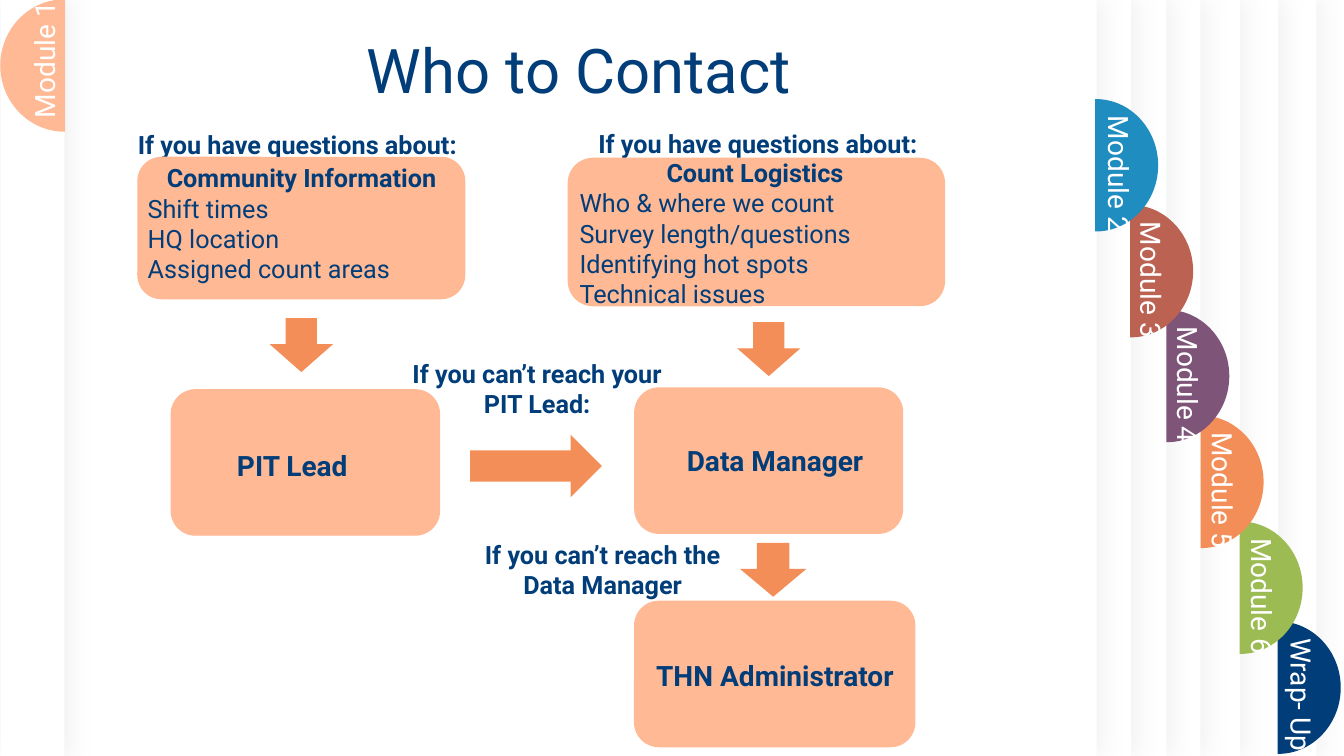
from lxml import etree
from pptx import Presentation
from pptx.dml.color import RGBColor
from pptx.enum.shapes import MSO_SHAPE
from pptx.enum.text import MSO_ANCHOR, MSO_AUTO_SIZE, PP_ALIGN
from pptx.oxml.ns import qn
from pptx.util import Pt

CENTER, LEFT = PP_ALIGN.CENTER, PP_ALIGN.LEFT
RECTANGLE, ROUNDED = MSO_SHAPE.RECTANGLE, MSO_SHAPE.ROUNDED_RECTANGLE
DOWN, RIGHT = MSO_SHAPE.DOWN_ARROW, MSO_SHAPE.RIGHT_ARROW
MIDDLE = MSO_ANCHOR.MIDDLE
GROW = MSO_AUTO_SIZE.SHAPE_TO_FIT_TEXT

COLORS = {
    "white": "FFFFFF", "navy": "003D79", "green": "9DBB53", "orange": "F48E58",
    "purple": "7E5479", "brick": "BB6253", "blue": "1F8DBF", "peach": "FFB994",
    "shadow": "D3D5D6",
}
FONT = "Roboto"
SLIDE_WIDTH, SLIDE_HEIGHT = 960, 540
PAGE_WIDTH = 755.3
PAGE_LEFTS = [185, 157.7, 130.3, 102.2, 77.8, 52.6, 28.1]
TAB_HEIGHT = 93.6
TAB_WIDTH = 44
CURVE = 0.55  # control point distance for a quarter ellipse
LABEL_SIZE = (38.9, 115.2)

TITLE = "Who to Contact"
# label, colour, left, top, label left
TABS = [
    ("Module 2", "blue", 782.8, 71.3, 776.2),
    ("Module 3", "brick", 807.8, 146.9, 799.2),
    ("Module 4", "purple", 833.6, 221.8, 825.6),
    ("Module 5", "orange", 858.1, 297.4, 850.3),
    ("Module 6", "green", 886, 373, 878.4),
    ("Wrap- Up", "navy", 913.2, 444.4, 906.5),
]
# text, (left, top, width, height)
QUESTIONS = [
    ("If you have questions about:", (67.7, 88.6, 289.4, 29)),
    ("If you have questions about:", (404.9, 87.8, 272.9, 29)),
]
FALLBACKS = [
    ("If you can’t reach your PIT Lead:", (285.8, 252.3, 195.8, 51)),
    ("If you can’t reach the Data Manager", (332.6, 381.6, 195.8, 51)),
]
# heading, items, box, text box
TOPICS = [
    ("Community Information",
     ["Shift times", "HQ location", "Assigned count areas"],
     (98.6, 112.5, 233.3, 100.8), (98.4, 112.6, 234, 94.3)),
    ("Count Logistics ",
     ["Who & where we count", "Survey length/questions",
      "Identifying hot spots", "Technical issues"],
     (406, 113.2, 268.6, 105.1), (406.9, 109, 269.3, 116.6)),
]
# name, alignment, box, text box
CONTACTS = [
    ("PIT Lead", LEFT, (122.4, 278.5, 191.5, 103.7), (162.2, 316.8, 191.5, 31.7)),
    ("Data Manager", CENTER, (453.5, 277.2, 191.2, 103.7), (457.9, 313.2, 191.5, 31.7)),
    ("THN Administrator", CENTER, (453.4, 429.6, 200, 103.7), (453.4, 466.6, 200.2, 31.7)),
]
ARROWS = [
    (DOWN, (194, 227.7, 42.5, 37.4)),
    (DOWN, (527.9, 230.6, 42.5, 37.4)),
    (RIGHT, (336.4, 311.6, 92.9, 42.5)),
    (DOWN, (530, 388.2, 44.6, 37.4)),
]


def rgb(name):
    return RGBColor.from_string(COLORS[name])


def paint(shape, color, outlined=True):
    shape.shadow.inherit = False
    shape.fill.solid()
    shape.fill.fore_color.rgb = rgb(color)
    if outlined:
        shape.line.color.rgb = rgb(color)
        shape.line.width = Pt(1)
        outline = shape.element.spPr.find(qn("a:ln"))
        etree.SubElement(outline, qn("a:miter"), lim="800000")
    else:
        shape.line.fill.background()


def add_block(slide, kind, box, color, outlined=True):
    shape = slide.shapes.add_shape(kind, *map(Pt, box))
    paint(shape, color, outlined)
    return shape


def add_page(slide, left, width):
    """Add a white sheet that casts a soft shadow to the right."""
    page = add_block(slide, RECTANGLE, (left, 0, width, SLIDE_HEIGHT), "white", False)
    effects = page.element.spPr.find(qn("a:effectLst"))
    shadow = etree.SubElement(effects, qn("a:outerShdw"), blurRad=str(Pt(17)),
                              dist=str(Pt(3)), dir="0", algn="l", rotWithShape="0")
    color = etree.SubElement(shadow, qn("a:srgbClr"), val=COLORS["shadow"])
    etree.SubElement(color, qn("a:alpha"), val="35000")


def add_tab(slide, flat_edge, top, color, reach=TAB_WIDTH):
    """Add a half disc that bulges by reach, to the left when negative."""
    radius = TAB_HEIGHT / 2
    middle, bottom, tip = top + radius, top + TAB_HEIGHT, flat_edge + reach
    shoulder, bend = flat_edge + CURVE * reach, CURVE * radius
    outline = [
        (flat_edge, bottom),
        (shoulder, bottom), (tip, middle + bend), (tip, middle),
        (tip, middle - bend), (shoulder, top), (flat_edge, top),
    ]
    builder = slide.shapes.build_freeform(Pt(flat_edge), Pt(top))
    builder.add_line_segments([(Pt(x), Pt(y)) for x, y in outline], close=True)
    tab = builder.convert_to_shape()
    segments = list(tab.element.iter(qn("a:lnTo")))
    for first in (1, 4):
        curve = etree.Element(qn("a:cubicBezTo"))
        segments[first].addprevious(curve)
        for segment in segments[first:first + 3]:
            curve.append(segment[0])
            segment.getparent().remove(segment)
    paint(tab, color)


def write(shape, lines, size=18, color="navy", bold=False, align=LEFT,
          heading=False, spacing=None):
    """Fill a shape with lines; heading makes the first one bold and centred."""
    frame = shape.text_frame
    frame.word_wrap = True
    for index, line in enumerate(lines):
        paragraph = frame.paragraphs[0] if index == 0 else frame.add_paragraph()
        is_heading = heading and index == 0
        paragraph.alignment = CENTER if is_heading else align
        if spacing:
            paragraph.line_spacing = spacing
        run = paragraph.add_run()
        run.text = line
        run.font.name = FONT
        run.font.size = Pt(size)
        run.font.bold = bold or is_heading
        run.font.color.rgb = rgb(color)


def add_text(slide, box, lines, **text_format):
    text_box = slide.shapes.add_textbox(*map(Pt, box))
    write(text_box, lines, **text_format)
    text_box.text_frame.auto_size = GROW
    return text_box


def add_tab_label(slide, left, top, label, rotation=0):
    text_box = add_text(slide, (left, top, *LABEL_SIZE), [label], size=20, color="white")
    text_box.element.txBody.bodyPr.set("vert", "vert")
    text_box.rotation = rotation


def add_title(slide):
    title = slide.shapes.title
    title.left, title.top, title.width, title.height = map(Pt, (45.8, 0.4, 735.8, 104.4))
    title.text_frame.vertical_anchor = MIDDLE
    write(title, [TITLE], size=44, align=CENTER, spacing=0.9)
    title.element.getparent().append(title.element)  # in front of the pages


def main():
    presentation = Presentation()
    presentation.slide_width, presentation.slide_height = Pt(SLIDE_WIDTH), Pt(SLIDE_HEIGHT)
    slide = presentation.slides.add_slide(presentation.slide_layouts[5])

    for left in PAGE_LEFTS:
        add_page(slide, left, PAGE_WIDTH)
    add_page(slide, 0.7, 45.4)
    for _, color, left, top, _ in reversed(TABS):
        add_tab(slide, left, top, color)
    add_tab(slide, 46.1, 0, "peach", reach=-45.4)
    add_tab_label(slide, 15.8, -23.8, "Module 1", rotation=180)
    for label, _, _, top, label_left in TABS:
        add_tab_label(slide, label_left, top + 4.4, label)

    add_title(slide)
    for text, box in QUESTIONS:
        add_text(slide, box, [text], bold=True, align=CENTER)
    for heading, items, box, text_box in TOPICS:
        add_block(slide, ROUNDED, box, "peach")
        add_text(slide, text_box, [heading, *items], heading=True)
    for name, align, box, text_box in CONTACTS:
        add_block(slide, ROUNDED, box, "peach")
        add_text(slide, text_box, [name], size=20, bold=True, align=align)
    for kind, box in ARROWS:
        add_block(slide, kind, box, "orange")
    for text, box in FALLBACKS:
        add_text(slide, box, [text], bold=True, align=CENTER)

    presentation.save("out.pptx")


if __name__ == "__main__":
    main()
